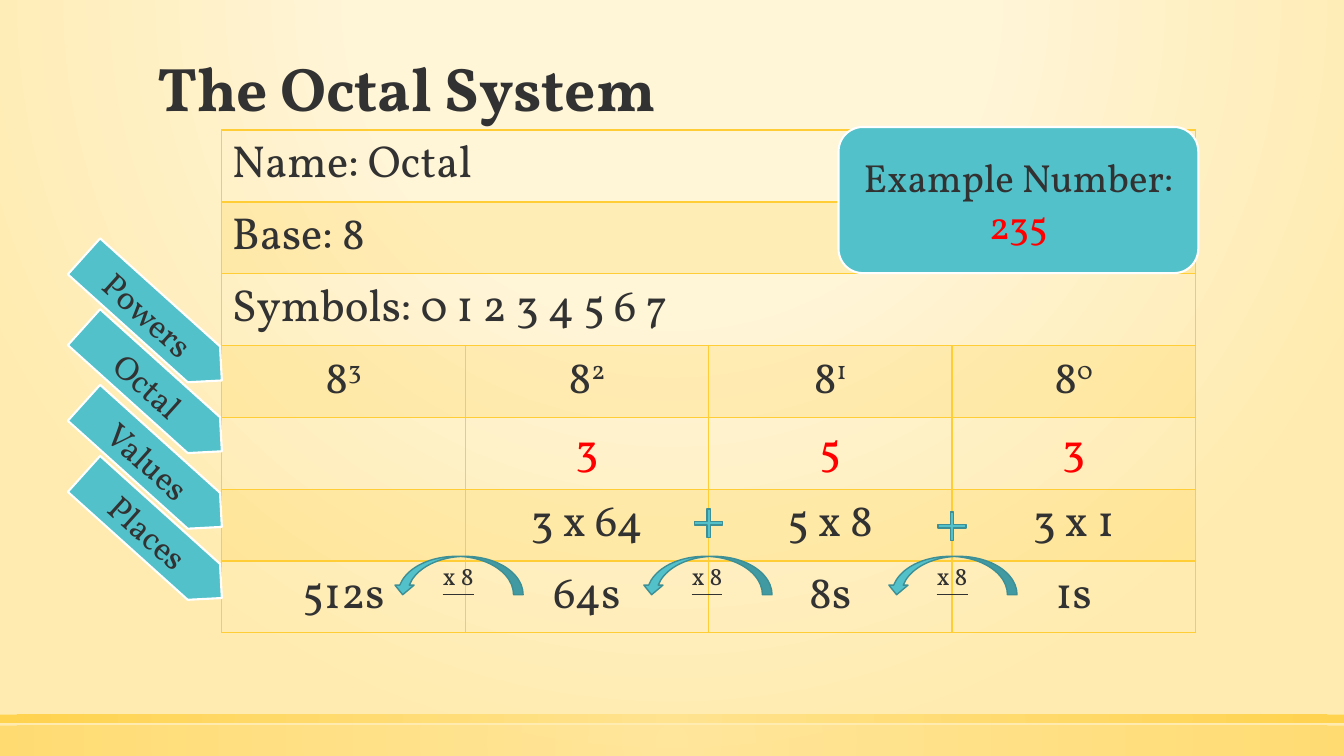
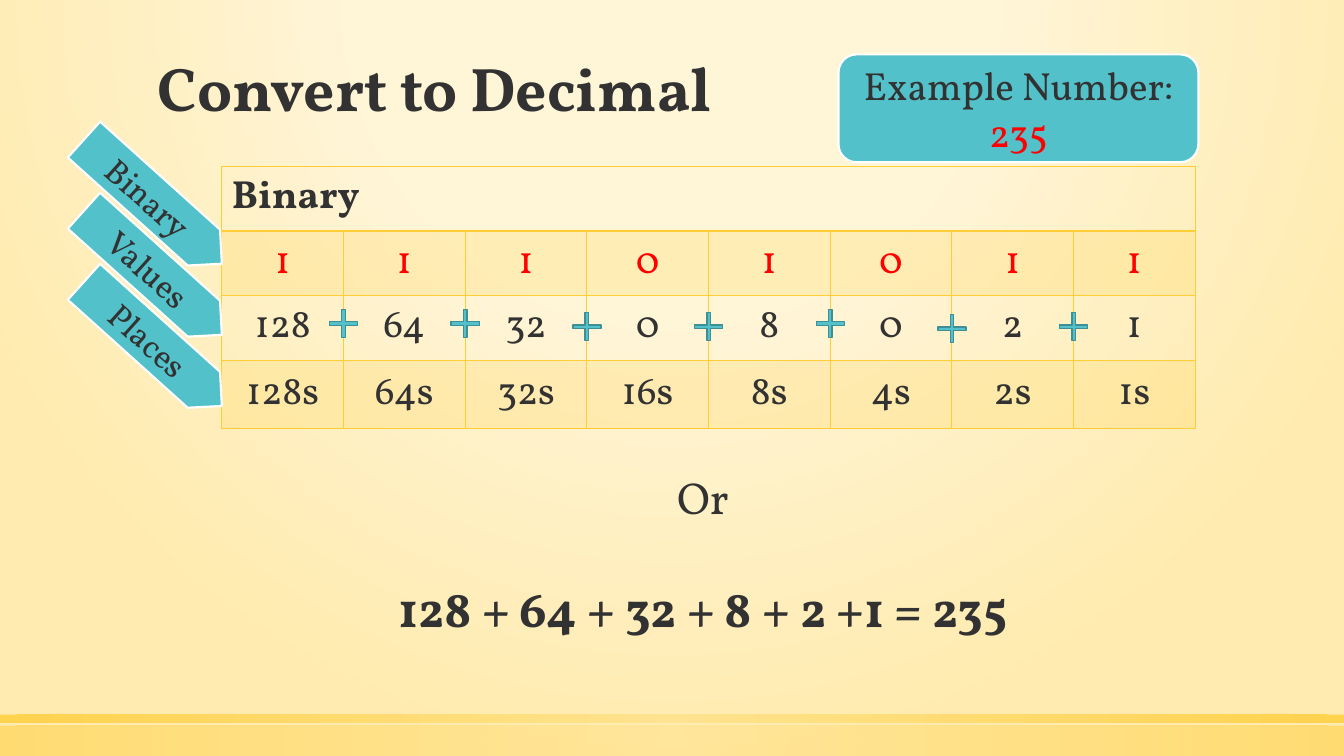
from dataclasses import dataclass
from typing import Any, NamedTuple, Sequence

from lxml import etree
from pptx import Presentation
from pptx import util as u
from pptx.dml.color import RGBColor
from pptx.enum import shapes, text
from pptx.oxml import ns

Pt = u.Pt
SHAPE = shapes.MSO_SHAPE
ALIGN = text.PP_ALIGN
ANCHOR = text.MSO_ANCHOR


# Theme
@dataclass(frozen=True)
class Theme:
    font: str = "Vollkorn"
    ink: RGBColor = RGBColor(0x32, 0x32, 0x32)
    red: RGBColor = RGBColor(0xFF, 0x00, 0x00)
    teal: RGBColor = RGBColor(0x52, 0xC1, 0xCA)
    deep_teal: RGBColor = RGBColor(0x3D, 0x8F, 0x95)
    white: RGBColor = RGBColor(0xFF, 0xFF, 0xFF)
    gold: RGBColor = RGBColor(0xFF, 0xCD, 0x36)
    light_gold: RGBColor = RGBColor(0xFF, 0xE1, 0x86)
    cream: RGBColor = RGBColor(0xFF, 0xF5, 0xD7)
    sand: RGBColor = RGBColor(0xFF, 0xEB, 0xAF)
    title_size: float = 44
    sum_size: float = 36
    large_size: float = 32
    medium_size: float = 28
    tag_size: float = 24
    step_size: float = 18
    band_alpha: int = 20


THEME = Theme()


class Box(NamedTuple):
    left: float
    top: float
    width: float
    height: float


class Line(NamedTuple):
    text: str
    size: float
    color: RGBColor = THEME.ink
    bold: bool = False
    underline: bool = False
    align: Any = ALIGN.CENTER
    space_before: float = 0
    line_spacing: float = 1.0


class Stop(NamedTuple):
    position: int
    color: RGBColor
    alpha: int


class Row(NamedTuple):
    cells: tuple[str, ...]  # a single cell spans the whole row
    color: RGBColor = THEME.ink
    bold: bool = False


class Mark(NamedTuple):
    left: float
    top: float


@dataclass(frozen=True)
class Grid:
    top: float
    size: float
    heights: tuple[float, ...]
    columns: int
    rows: tuple[Row, ...]
    left: float = 158.4
    width: float = 695.5

    @property
    def column_width(self) -> float:
        return self.width / self.columns


@dataclass(frozen=True)
class Lesson:
    title: str
    grid: Grid
    example: Box
    tags: dict[str, float]  # label: top
    pluses: dict[int, float]  # column border: top
    steps: tuple[Mark, ...] = ()
    closing: tuple[Line, ...] = ()


# Formatting helpers
def apply(target: Any, formats: dict[str, Any]) -> None:
    for name, value in formats.items():
        setattr(target, name, value)


def add_color(parent: Any, color: RGBColor, alpha: int = 100) -> None:
    node = etree.SubElement(parent, ns.qn("a:srgbClr"), val=str(color))
    if alpha < 100:
        etree.SubElement(node, ns.qn("a:alpha"), val=str(alpha * 1000))


def set_gradient(props: Any, stops: Sequence[Stop], focus: dict[str, int]) -> None:
    """Replace the solid fill with a circular gradient."""
    gradient = etree.Element(ns.qn("a:gradFill"), rotWithShape="1")
    stop_list = etree.SubElement(gradient, ns.qn("a:gsLst"))
    for stop in stops:
        node = etree.SubElement(stop_list, ns.qn("a:gs"), pos=str(stop.position * 1000))
        add_color(node, stop.color, stop.alpha)
    circle = etree.SubElement(gradient, ns.qn("a:path"), path="circle")
    etree.SubElement(circle, ns.qn("a:fillToRect"),
                     {side: str(value * 1000) for side, value in focus.items()})
    props.replace(props.find(ns.qn("a:solidFill")), gradient)


def add_run(paragraph: Any, wording: str, line: Line, baseline: int = 0) -> None:
    run = paragraph.add_run()
    run.text = wording
    apply(run.font, {"name": THEME.font, "size": Pt(line.size),
                     "bold": line.bold, "underline": line.underline})
    run.font.color.rgb = line.color
    if baseline:
        run._r.get_or_add_rPr().set("baseline", str(baseline * 1000))


def write(frame: Any, lines: Sequence[Line]) -> None:
    """Write one paragraph a line; a caret starts a superscript."""
    for index, line in enumerate(lines):
        paragraph = frame.add_paragraph() if index else frame.paragraphs[0]
        apply(paragraph, {"alignment": line.align, "line_spacing": line.line_spacing,
                          "space_before": Pt(line.space_before)})
        base, _, power = line.text.partition("^")
        add_run(paragraph, base, line)
        if power:
            add_run(paragraph, power, line, 30)


def add_label(slide: Any, box: Box, lines: Sequence[Line], anchor: Any) -> None:
    label = slide.shapes.add_textbox(*map(Pt, box))
    apply(label.text_frame, {"word_wrap": True, "vertical_anchor": anchor})
    write(label.text_frame, lines)


def add_figure(slide: Any, kind: Any, box: Box, outline: RGBColor, weight: float,
               lines: Sequence[Line] = ()) -> Any:
    figure = slide.shapes.add_shape(kind, *map(Pt, box))
    figure.shadow.inherit = False
    figure.fill.solid()
    figure.fill.fore_color.rgb = THEME.teal
    figure.line.color.rgb = outline
    figure.line.width = Pt(weight)
    write(figure.text_frame, lines)
    return figure


# Shared backdrop and title
def add_backdrop(slide: Any) -> None:
    slide.background.fill.solid()
    set_gradient(slide.element.find(".//" + ns.qn("p:bgPr")),
                 [Stop(0, THEME.cream, 59), Stop(40, THEME.cream, 66),
                  Stop(100, THEME.sand, 100)],
                 {"l": 50, "t": -80, "r": 50, "b": 180})
    for box, alpha in ((Box(0, 518.4, 960, 21.6), 50), (Box(0, 510.5, 960, 5.8), 80)):
        band = slide.shapes.add_shape(SHAPE.RECTANGLE, *map(Pt, box))
        band.shadow.inherit = False
        band.line.fill.background()
        band.fill.solid()
        set_gradient(band.element.spPr,
                     [Stop(0, THEME.light_gold, alpha), Stop(100, THEME.gold, alpha)],
                     dict.fromkeys("ltrb", 50))


def add_title(slide: Any, title: str) -> None:
    line = Line(title, THEME.title_size, bold=True, align=ALIGN.LEFT, line_spacing=0.9)
    add_label(slide, Box(105.8, 36.7, 748.8, 56.2), [line], ANCHOR.BOTTOM)


# Table
def set_borders(cell: Any, widths: dict[str, float]) -> None:
    props = cell._tc.get_or_add_tcPr()
    for side, width in widths.items():
        edge = etree.SubElement(props, ns.qn("a:ln" + side), w=str(Pt(width)))
        add_color(etree.SubElement(edge, ns.qn("a:solidFill")), THEME.gold)


def shade(cell: Any, banded: bool) -> None:
    if not banded:
        cell.fill.background()
        return
    cell.fill.solid()
    cell.fill.fore_color.rgb = THEME.gold
    color = cell._tc.tcPr.find(".//" + ns.qn("a:solidFill") + "[last()]")
    color = cell._tc.tcPr.find(ns.qn("a:solidFill")) if color is None else color
    fill = cell._tc.tcPr.find(ns.qn("a:solidFill"))
    fill.clear()
    add_color(fill, THEME.gold, THEME.band_alpha)


def add_grid(slide: Any, grid: Grid) -> None:
    table = slide.shapes.add_table(
        len(grid.rows), grid.columns, Pt(grid.left), Pt(grid.top),
        Pt(grid.width), Pt(sum(grid.heights))).table
    apply(table, {"first_row": False, "horz_banding": False})
    for column in table.columns:
        column.width = Pt(grid.column_width)
    for index, (row, height) in enumerate(zip(grid.rows, grid.heights)):
        table.rows[index].height = Pt(height)
        for number in range(grid.columns):
            cell = table.cell(index, number)
            set_borders(cell, {"L": 1, "R": 1, "T": 2 if index == 1 else 1,
                               "B": 2 if index == 0 else 1})
            shade(cell, index % 2 == 1)
        spans = len(row.cells) == 1
        if spans:
            table.cell(index, 0).merge(table.cell(index, grid.columns - 1))
        for number, wording in enumerate(row.cells):
            cell = table.cell(index, number)
            cell.vertical_anchor = ANCHOR.TOP if spans else ANCHOR.MIDDLE
            write(cell.text_frame, [Line(wording, grid.size, row.color, row.bold,
                                         align=ALIGN.LEFT if spans else ALIGN.CENTER)])


# Whole slide
def add_lesson(deck: Any, lesson: Lesson) -> None:
    slide = deck.slides.add_slide(deck.slide_layouts[6])
    add_backdrop(slide)
    add_title(slide, lesson.title)
    add_grid(slide, lesson.grid)
    add_figure(slide, SHAPE.ROUNDED_RECTANGLE, lesson.example, THEME.white, 1.5,
               [Line("Example Number:", THEME.medium_size),
                Line("235", THEME.medium_size, THEME.red)])
    for label, top in lesson.tags.items():
        tag = add_figure(slide, SHAPE.PENTAGON, Box(43, top, 132.5, 34.5),
                         THEME.white, 1.5, [Line(label, THEME.tag_size)])
        tag.rotation = 42
    for step in lesson.steps:
        arrow = add_figure(slide, SHAPE.CURVED_DOWN_ARROW, Box(*step, 92.9, 27.4),
                           THEME.deep_teal, 1,
                           [Line("x 8", THEME.step_size, underline=True)])
        arrow.element.spPr.find(ns.qn("a:xfrm")).set("flipH", "1")
    side = 27.4
    for border, top in lesson.pluses.items():
        center = lesson.grid.left + border * lesson.grid.column_width
        plus = add_figure(slide, SHAPE.MATH_PLUS, Box(center - side / 2, top, side, side),
                          THEME.deep_teal, 1)
        plus.adjustments[0] = 0.09
    if lesson.closing:
        add_label(slide, Box(170.6, 331.9, 663.1, 128.2), lesson.closing, ANCHOR.TOP)


# Content
LESSONS = (
    Lesson(
        title="The Octal System",
        grid=Grid(92.9, THEME.large_size, (51.33,) * 7, 4, (
            Row(("Name: Octal",)),
            Row(("Base: 8",)),
            Row(("Symbols: 0 1 2 3 4 5 6 7",)),
            Row(("8^3", "8^2", "8^1", "8^0")),
            Row(("", "3", "5", "3"), THEME.red),
            Row(("", "3 x 64", "5 x 8", "3 x 1")),
            Row(("512s", "64s", "8s", "1s")))),
        example=Box(599, 90.7, 257, 104.4),
        tags={"Powers": 210.2, "Octal": 260.8, "Values": 314.8, "Places": 365.6},
        pluses={2: 360, 3: 362.2},
        steps=(Mark(633.6, 397.4), Mark(458.6, 397.4), Mark(280.8, 397.4))),
    Lesson(
        title="Convert to Decimal",
        grid=Grid(118.8, THEME.medium_size, (46.2, 46.2, 46.2, 48.5), 8, (
            Row(("Binary",), bold=True),
            Row(tuple("11101011"), THEME.red),
            Row(("128", "64", "32", "0", "8", "0", "2", "1")),
            Row(tuple(f"{2 ** power}s" for power in range(7, -1, -1))))),
        example=Box(599, 38.9, 257, 77),
        tags={"Binary": 126.8, "Values": 177.6, "Places": 228.4},
        pluses={1: 217.4, 2: 217.4, 3: 219.6, 4: 219.6, 5: 217.4, 6: 221, 7: 219.6},
        closing=(Line("Or", THEME.large_size),
                 Line("128 + 64 + 32 + 8 + 2 +1 = 235", THEME.sum_size,
                      bold=True, space_before=38.5))),
)


def main() -> None:
    deck = Presentation()
    apply(deck, {"slide_width": Pt(960), "slide_height": Pt(540)})
    for lesson in LESSONS:
        add_lesson(deck, lesson)
    deck.save("out.pptx")


if __name__ == "__main__":
    main()
